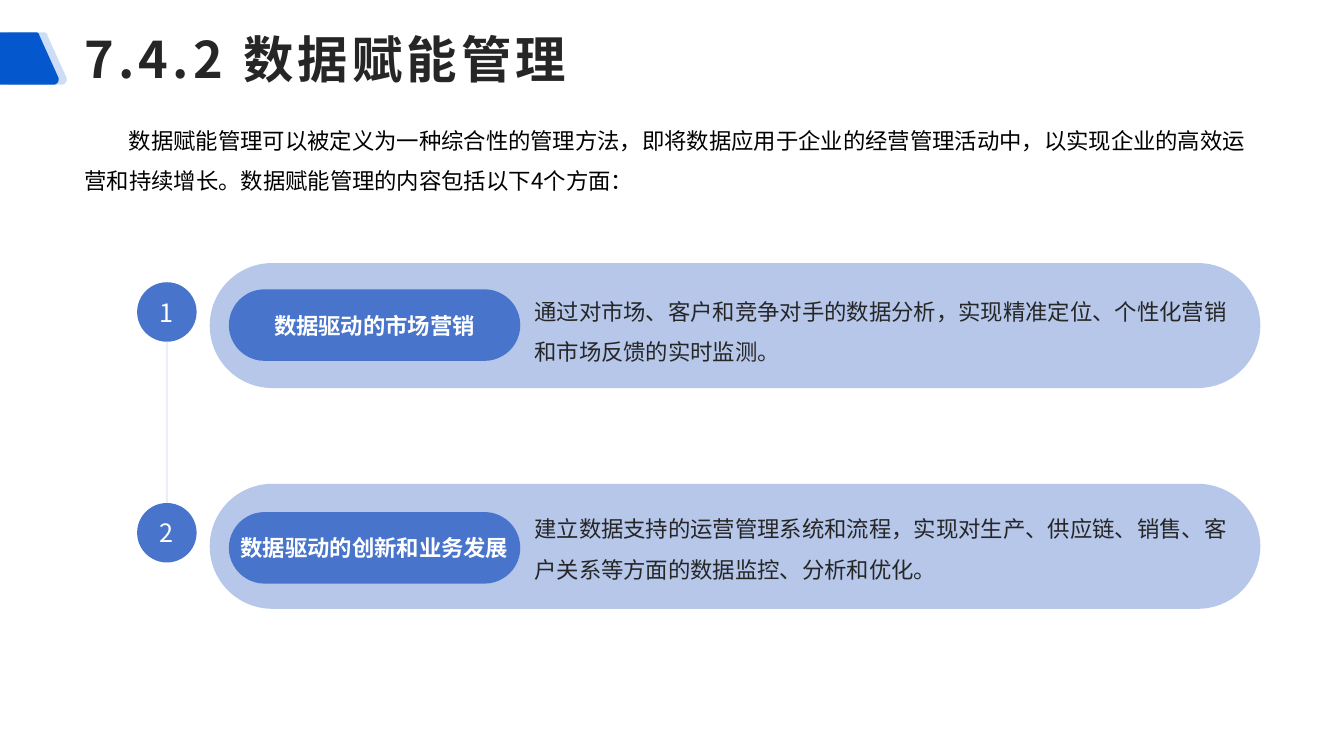
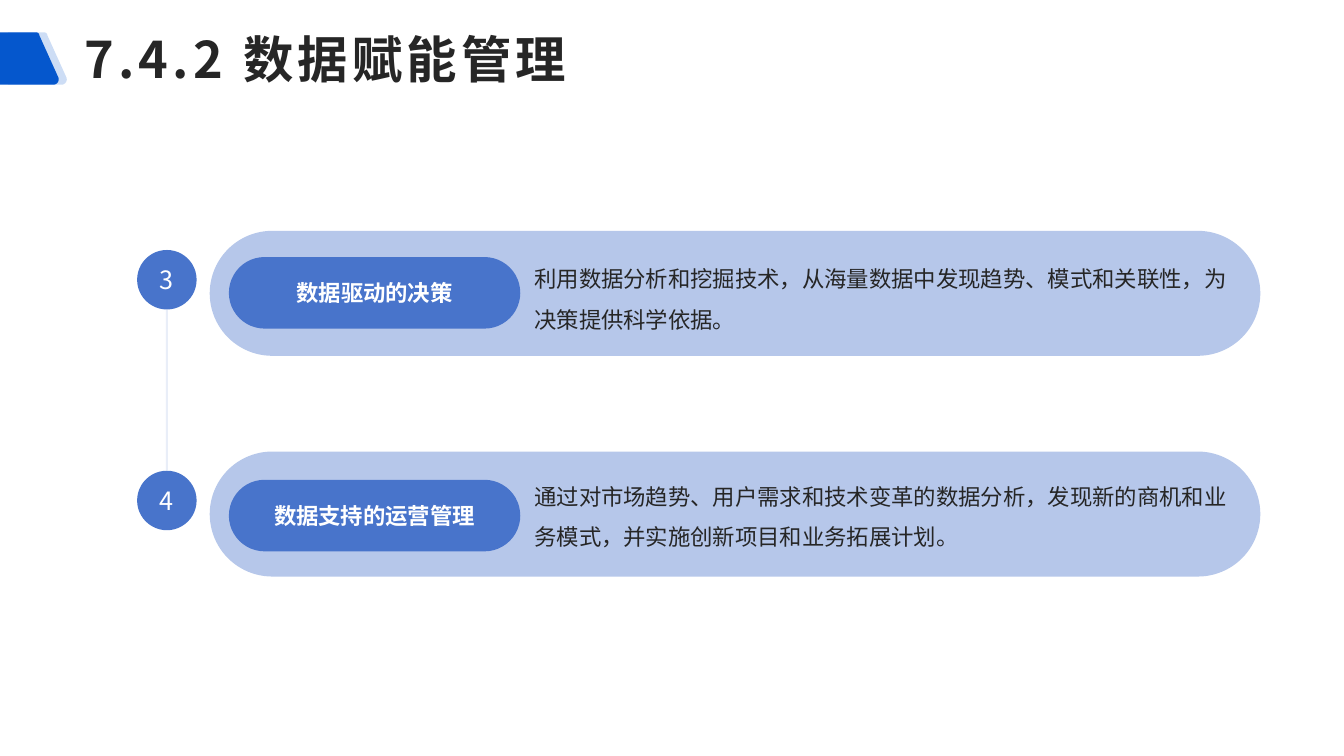
"""Build two slides on data-enabled management with python-pptx."""
from pptx import Presentation
from pptx.dml.color import RGBColor
from pptx.enum.shapes import MSO_CONNECTOR, MSO_SHAPE
from pptx.enum.text import MSO_ANCHOR, MSO_AUTO_SIZE, PP_ALIGN
from pptx.oxml.ns import qn
from pptx.util import Inches, Pt
from lxml.etree import SubElement

FONT = "Noto Sans CJK SC"
BRAND = RGBColor(0x05, 0x57, 0xCD)
BLUE = RGBColor(0x48, 0x74, 0xCB)
PALE = RGBColor(0xB6, 0xC7, 0xEA)
LINK = RGBColor(0x91, 0xAC, 0xE0)
INK = RGBColor(0x26, 0x26, 0x26)
BLACK = RGBColor(0, 0, 0)
WHITE = RGBColor(255, 255, 255)

TITLE = "7.4.2 数据赋能管理"
SLIDES = [
    {
        "top": 2.61,
        "intro": "数据赋能管理可以被定义为一种综合性的管理方法，即将数据应用于企业的经营管理活动中，"
                 "以实现企业的高效运营和持续增长。数据赋能管理的内容包括以下4个方面：",
        "items": [
            ("1", "数据驱动的市场营销",
             "通过对市场、客户和竞争对手的数据分析，实现精准定位、个性化营销和市场反馈的实时监测。"),
            ("2", "数据驱动的创新和业务发展",
             "建立数据支持的运营管理系统和流程，实现对生产、供应链、销售、客户关系等方面的数据监控、分析和优化。"),
        ],
    },
    {
        "top": 2.29,
        "intro": None,
        "items": [
            ("3", "数据驱动的决策",
             "利用数据分析和挖掘技术，从海量数据中发现趋势、模式和关联性，为决策提供科学依据。"),
            ("4", "数据支持的运营管理",
             "通过对市场趋势、用户需求和技术变革的数据分析，发现新的商机和业务模式，并实施创新项目和业务拓展计划。"),
        ],
    },
]

ROW_PITCH = 2.19
ROW_OFFSETS = [
    {"pill": 0.26, "text": 0.05, "height": 1.12},
    {"pill": 0.28, "text": 0.14, "height": 0.88},
]
TAB_CORNERS = [
    [(0.35, 0.32), (0.37, 0.32), (0.39, 0.33), (0.39, 0.35)],
    [(0.58, 0.77), (0.59, 0.8), (0.57, 0.84), (0.53, 0.84)],
]
TAB_LEFT, TAB_TOP, TAB_BOTTOM, TAB_SHIFT = 0, 0.32, 0.84, 0.08
CURVE_STEPS = 10

TITLE_STYLE = {"size": Pt(36), "bold": True, "color": INK}
INTRO_STYLE = {"size": Pt(16), "bold": False, "color": BLACK}
BODY_STYLE = {"size": Pt(16), "bold": False, "color": INK}
PILL_STYLE = {"size": Pt(16), "bold": True, "color": WHITE}
NUMBER_STYLE = {"size": Pt(18), "bold": False, "color": WHITE}


def set_alpha(fill_parent, percent):
    color = fill_parent.find(".//" + qn("a:srgbClr"))
    SubElement(color, qn("a:alpha")).set("val", str(percent * 1000))


def write_text(shape, text, style, para_format=None, frame_format=None):
    frame = shape.text_frame
    frame.word_wrap = True
    for name, value in (frame_format or {}).items():
        setattr(frame, name, value)
    para = frame.paragraphs[0]
    for name, value in (para_format or {}).items():
        setattr(para, name, value)
    span = para.add_run()
    span.text = text
    span.font.name = FONT
    for name, value in style.items():
        if name == "color":
            span.font.color.rgb = value
        else:
            setattr(span.font, name, value)
    SubElement(span.font._element, qn("a:ea")).set("typeface", FONT)
    return para, span


def paint(shape, color):
    shape.shadow.inherit = False
    shape.fill.solid()
    shape.fill.fore_color.rgb = color
    shape.line.fill.background()
    return shape


def add_shape(page, kind, bounds, color):
    shape = page.shapes.add_shape(kind, *map(Inches, bounds))
    if kind == MSO_SHAPE.ROUNDED_RECTANGLE:
        shape.adjustments[0] = 0.5
    return paint(shape, color)


def add_box(page, bounds, *content):
    box = page.shapes.add_textbox(*map(Inches, bounds))
    return write_text(box, *content)


def curve_point(corner, t):
    weights = [(1 - t) ** 3, 3 * t * (1 - t) ** 2, 3 * t ** 2 * (1 - t), t ** 3]
    return tuple(sum(w * point[axis] for w, point in zip(weights, corner)) for axis in (0, 1))


def add_tab(page, shift):
    edge = [curve_point(corner, step / CURVE_STEPS)
            for corner in TAB_CORNERS for step in range(CURVE_STEPS + 1)]
    outline = edge + [(TAB_LEFT, TAB_BOTTOM)]
    builder = page.shapes.build_freeform(Inches(TAB_LEFT + shift), Inches(TAB_TOP))
    builder.add_line_segments([(Inches(x + shift), Inches(y)) for x, y in outline])
    return paint(builder.convert_to_shape(), BRAND)


def add_header(page):
    set_alpha(add_tab(page, TAB_SHIFT)._element.spPr, 20)
    add_tab(page, 0)
    para, span = add_box(page, (0.74, 0.08, 12.59, 1), TITLE, TITLE_STYLE,
                         {}, {"vertical_anchor": MSO_ANCHOR.MIDDLE})
    span.font._element.set("spc", "300")


def add_intro(page, text):
    para, span = add_box(page, (0.74, 1.08, 11.8, 0.91), text, INTRO_STYLE,
                         {"line_spacing": 1.5}, {"auto_size": MSO_AUTO_SIZE.SHAPE_TO_FIT_TEXT})
    para._p.get_or_add_pPr().set("indent", str(Inches(0.44)))


def add_row(page, top, item, offsets):
    number, label, detail = item
    tight = {"vertical_anchor": MSO_ANCHOR.MIDDLE, "margin_left": 0, "margin_right": 0,
             "margin_top": 0, "margin_bottom": 0}
    centred = {"alignment": PP_ALIGN.CENTER}
    add_shape(page, MSO_SHAPE.ROUNDED_RECTANGLE, (2.08, top, 10.42, 1.24), PALE)
    pill = add_shape(page, MSO_SHAPE.ROUNDED_RECTANGLE,
                     (2.27, top + offsets["pill"], 2.89, 0.71), BLUE)
    write_text(pill, label, PILL_STYLE, centred, tight)
    add_box(page, (5.3, top + offsets["text"], 6.88, offsets["height"]), detail, BODY_STYLE,
            {"line_spacing": 1.5}, tight)
    circle = add_shape(page, MSO_SHAPE.OVAL, (1.36, top + 0.19, 0.59, 0.59), BLUE)
    write_text(circle, number, NUMBER_STYLE, centred,
               {"vertical_anchor": MSO_ANCHOR.MIDDLE, "word_wrap": False})
    return circle


def link_circles(page, upper, lower):
    middle = upper.left + upper.width // 2
    link = page.shapes.add_connector(MSO_CONNECTOR.STRAIGHT, middle, upper.top + upper.height,
                                     middle, lower.top)
    link.line.width = Pt(1.5)
    link.line.color.rgb = LINK
    set_alpha(link._element.spPr, 20)
    SubElement(link._element.spPr, qn("a:effectLst"))


def main():
    deck = Presentation()
    deck.slide_width, deck.slide_height = Inches(13.33), Inches(7.5)
    for content in SLIDES:
        page = deck.slides.add_slide(deck.slide_layouts[6])
        add_header(page)
        if content["intro"]:
            add_intro(page, content["intro"])
        circles = [add_row(page, content["top"] + index * ROW_PITCH, item, offsets)
                   for index, (item, offsets) in enumerate(zip(content["items"], ROW_OFFSETS))]
        link_circles(page, *circles)
    deck.save("out.pptx")


if __name__ == "__main__":
    main()
